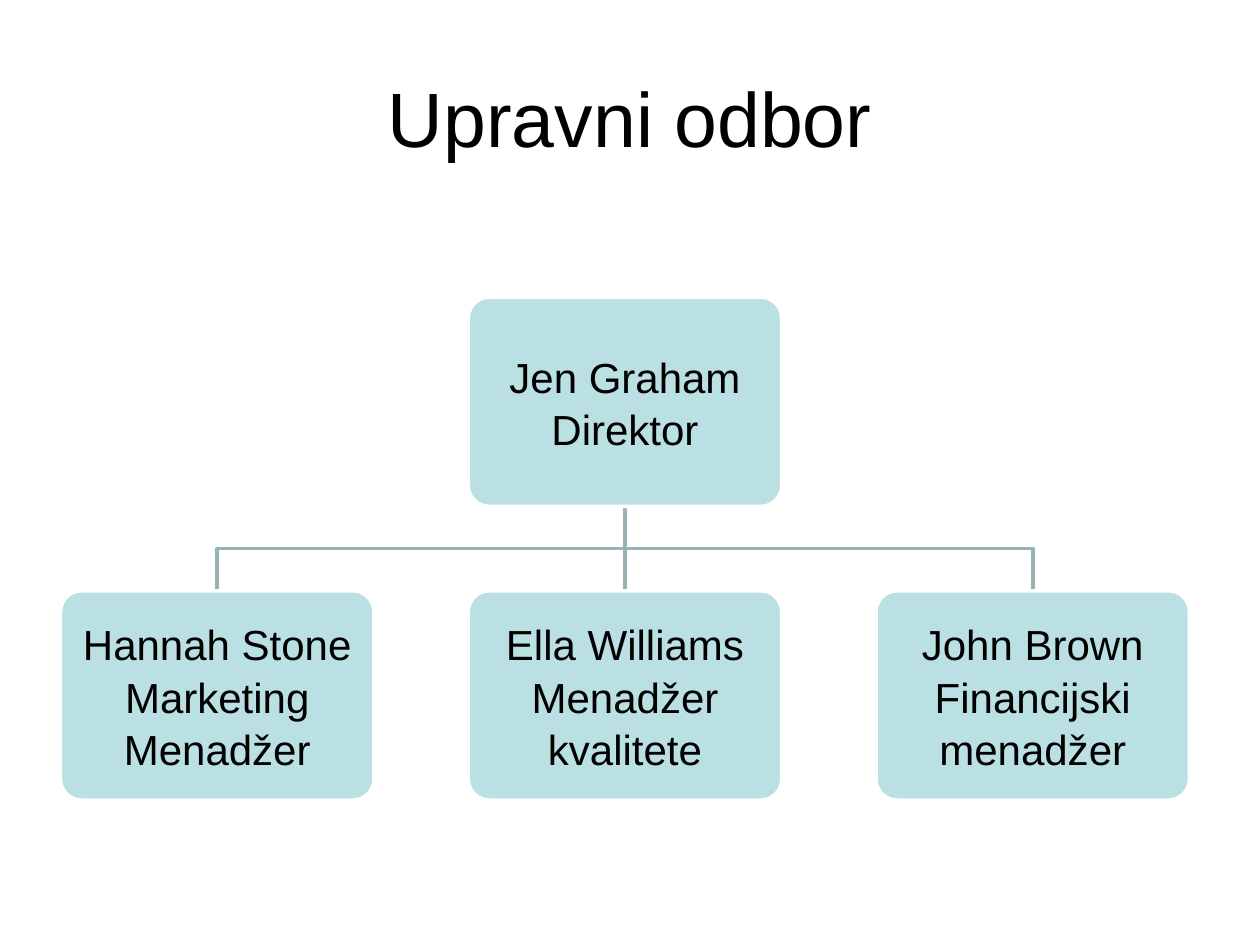
from dataclasses import dataclass

from lxml import etree
from pptx import Presentation
from pptx.dml.color import RGBColor
from pptx.enum.shapes import MSO_CONNECTOR, MSO_SHAPE
from pptx.enum.text import MSO_ANCHOR, PP_ALIGN
from pptx.oxml.ns import qn
from pptx.slide import Slide
from pptx.util import Cm, Pt

ROUNDED = MSO_SHAPE.ROUNDED_RECTANGLE
STRAIGHT = MSO_CONNECTOR.STRAIGHT
MIDDLE = MSO_ANCHOR.MIDDLE
CENTER = PP_ALIGN.CENTER


@dataclass(frozen=True)
class Theme:
    font: str = "Arial"
    text: RGBColor = RGBColor(0, 0, 0)
    box: RGBColor = RGBColor(0xBB, 0xE0, 0xE3)
    outline: RGBColor = RGBColor(0xFF, 0xFF, 0xFF)
    branch: RGBColor = RGBColor(0x96, 0xB3, 0xB6)
    title_size: Pt = Pt(44)
    member_size: Pt = Pt(24)
    line_width: Pt = Pt(2)


@dataclass(frozen=True)
class Member:
    lines: tuple[str, ...]
    column: int
    top: Cm

    @property
    def left(self) -> int:
        return FIRST_LEFT + self.column * COLUMN_STEP

    @property
    def center(self) -> int:
        return self.left + BOX_WIDTH // 2


THEME = Theme()
BOX_WIDTH, BOX_HEIGHT = Cm(6.32), Cm(4.22)
FIRST_LEFT, COLUMN_STEP = Cm(1.22), Cm(8.22)
DIRECTOR_TOP, MANAGER_TOP = Cm(5.99), Cm(11.91)
BRANCH_TOP, BRANCH_BEND = DIRECTOR_TOP + BOX_HEIGHT, Cm(11.06)

DIRECTOR = Member(("Jen Graham", "Direktor"), 1, DIRECTOR_TOP)
MANAGERS = [
    Member(lines, column, MANAGER_TOP)
    for column, lines in enumerate((
        ("Hannah Stone", "Marketing", "Menadžer"),
        ("Ella Williams", "Menadžer kvalitete"),
        ("John Brown", "Financijski menadžer"),
    ))
]


def apply_format(target, values: dict) -> None:
    for name, value in values.items():
        setattr(target, name, value)


def write_text(shape, lines: tuple[str, ...], size: Pt, spacing: float, margin: Cm) -> None:
    frame = shape.text_frame
    apply_format(frame, {
        "text": "\n".join(lines), "word_wrap": True, "vertical_anchor": MIDDLE,
        "margin_left": margin, "margin_right": margin,
        "margin_top": margin, "margin_bottom": margin,
    })
    for paragraph in frame.paragraphs:
        apply_format(paragraph, {"alignment": CENTER, "line_spacing": spacing})
        apply_format(paragraph.font, {"name": THEME.font, "size": size})
        paragraph.font.color.rgb = THEME.text


def set_line(shape, color: RGBColor) -> None:
    shape.line.color.rgb = color
    shape.line.width = THEME.line_width


def draw_title(slide: Slide, text: str) -> None:
    shape = slide.shapes.add_textbox(Cm(1.27), Cm(0.76), Cm(22.86), Cm(3.18))
    write_text(shape, (text,), THEME.title_size, 1.0, Cm(0.25))


def draw_branch(slide: Slide, parent: Member, child: Member) -> None:
    start, end = parent.center, child.center
    if start == end:
        shape = slide.shapes.add_connector(STRAIGHT, start, BRANCH_TOP, end, child.top)
        etree.SubElement(shape.element.spPr, qn("a:effectLst"))
    else:
        builder = slide.shapes.build_freeform(start, BRANCH_TOP)
        builder.add_line_segments(
            [(start, BRANCH_BEND), (end, BRANCH_BEND), (end, child.top)], close=False)
        shape = builder.convert_to_shape()
        shape.fill.background()
        shape.shadow.inherit = False
    set_line(shape, THEME.branch)


def draw_member(slide: Slide, member: Member) -> None:
    shape = slide.shapes.add_shape(ROUNDED, member.left, member.top, BOX_WIDTH, BOX_HEIGHT)
    shape.adjustments[0] = 0.1
    shape.shadow.inherit = False
    shape.fill.solid()
    shape.fill.fore_color.rgb = THEME.box
    set_line(shape, THEME.outline)
    write_text(shape, member.lines, THEME.member_size, 1.04, Cm(0.12))


def main() -> None:
    presentation = Presentation()
    apply_format(presentation, {"slide_width": Cm(25.4), "slide_height": Cm(19.05)})
    slide = presentation.slides.add_slide(presentation.slide_layouts[6])
    draw_title(slide, "Upravni odbor")
    for manager in MANAGERS:
        draw_branch(slide, DIRECTOR, manager)
    for member in (DIRECTOR, *MANAGERS):
        draw_member(slide, member)
    presentation.save("out.pptx")


if __name__ == "__main__":
    main()
